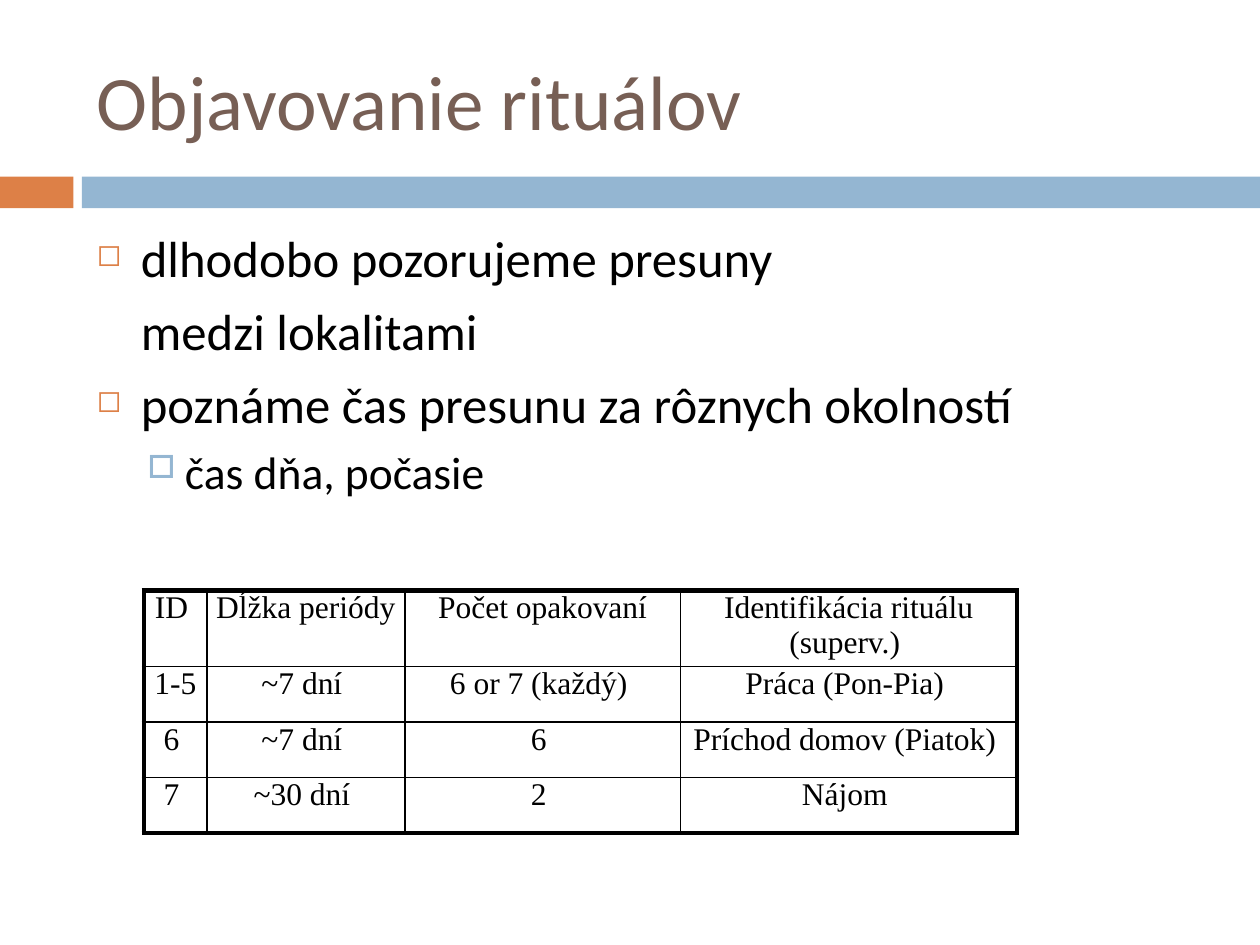
"""Build the slide on discovering rituals, with bullets and a table of periods."""
from lxml.etree import SubElement
from pptx import Presentation
from pptx.dml.color import RGBColor
from pptx.enum.shapes import MSO_SHAPE
from pptx.enum.text import MSO_ANCHOR, PP_ALIGN
from pptx.oxml.ns import qn
from pptx.util import Cm, Pt


def color(hex_value):
    return RGBColor.from_string(hex_value)


def add_text(paragraph, text, size, font, hex_value):
    run = paragraph.add_run()
    run.text = text
    run.font.size = Pt(size)
    run.font.name = font
    run.font.color.rgb = color(hex_value)


prs = Presentation()
prs.slide_width, prs.slide_height = Cm(25.4), Cm(19.05)
slide = prs.slides.add_slide(prs.slide_layouts[5])

for left, width, fill in [(0, 1.48, "DD8047"), (1.65, 23.75, "94B6D2")]:
    band = slide.shapes.add_shape(MSO_SHAPE.RECTANGLE, Cm(left), Cm(3.56), Cm(width), Cm(0.64))
    band.shadow.inherit = False
    band.fill.solid()
    band.fill.fore_color.rgb = color(fill)
    band.line.fill.background()

title = slide.shapes.title
title.left, title.top, title.width, title.height = Cm(1.7), Cm(0.64), Cm(22.66), Cm(2.74)
title.text_frame.vertical_anchor = MSO_ANCHOR.MIDDLE
heading = title.text_frame.paragraphs[0]
heading.alignment = PP_ALIGN.LEFT
add_text(heading, "Objavovanie rituálov", 44, "Calibri", "775F55")

observations = slide.shapes.add_textbox(Cm(1.7), Cm(4.45), Cm(22.66), Cm(12.5)).text_frame
observations.word_wrap = True
points = [
    ("dlhodobo pozorujeme presuny", 0, "◻"),
    ("medzi lokalitami", 0, None),
    ("poznáme čas presunu za rôznych okolností", 0, "◻"),
    ("čas dňa, počasie", 1, "□"),
]
levels = [(29, 7, 0.89, 0.89, "DD8047", 60), (26, 5.5, 1.78, 0.76, "94B6D2", 70)]
for index, (text, level, bullet) in enumerate(points):
    size, space, margin, hanging, bullet_color, bullet_size = levels[level]
    point = observations.add_paragraph() if index else observations.paragraphs[0]
    point.level = level
    point.space_before = Pt(space)
    add_text(point, text, size, "Calibri", "000000")
    properties = point._p.get_or_add_pPr()
    properties.set("marL", str(Cm(margin)))
    properties.set("indent", str(-Cm(hanging) if bullet else 0))
    if bullet:
        tint = SubElement(properties, qn("a:buClr"))
        SubElement(tint, qn("a:srgbClr"), val=bullet_color)
        SubElement(properties, qn("a:buSzPct"), val=str(bullet_size * 1000))
        SubElement(properties, qn("a:buChar"), char=bullet)
    else:
        SubElement(properties, qn("a:buNone"))

rituals = [
    ["ID ", "Dĺžka periódy", "Počet opakovaní", "Identifikácia rituálu (superv.) "],
    ["1-5 ", "~7 dní ", "6 or 7 (každý) ", "Práca (Pon-Pia) "],
    ["6 ", "~7 dní ", "6 ", "Príchod domov (Piatok) "],
    ["7 ", "~30 dní ", "2 ", "Nájom "],
]
table = slide.shapes.add_table(4, 4, Cm(2.9), Cm(11.91), Cm(17.6), Cm(4.48)).table
table.first_row = table.horz_banding = False
for column, width in zip(table.columns, [1.27, 3.99, 5.56, 6.78]):
    column.width = Cm(width)
for r, ritual in enumerate(rituals):
    table.rows[r].height = Cm(1.12)
    for c, text in enumerate(ritual):
        cell = table.cell(r, c)
        cell.margin_left = cell.margin_right = Cm(0.18)
        cell.margin_top = cell.margin_bottom = 0
        entry = cell.text_frame.paragraphs[0]
        entry.alignment = PP_ALIGN.CENTER
        add_text(entry, text, 18, "Times New Roman", "000000")
        outer_sides = {"lnL": c == 0, "lnR": c == 3, "lnT": r == 0, "lnB": r == 3}
        for side, outer in outer_sides.items():
            border = SubElement(cell._tc.get_or_add_tcPr(), qn(f"a:{side}"), w=str(Pt(3 if outer else 1)))
            ink = SubElement(border, qn("a:solidFill"))
            SubElement(ink, qn("a:srgbClr"), val="000000")
        cell.fill.background()

prs.save("out.pptx")
